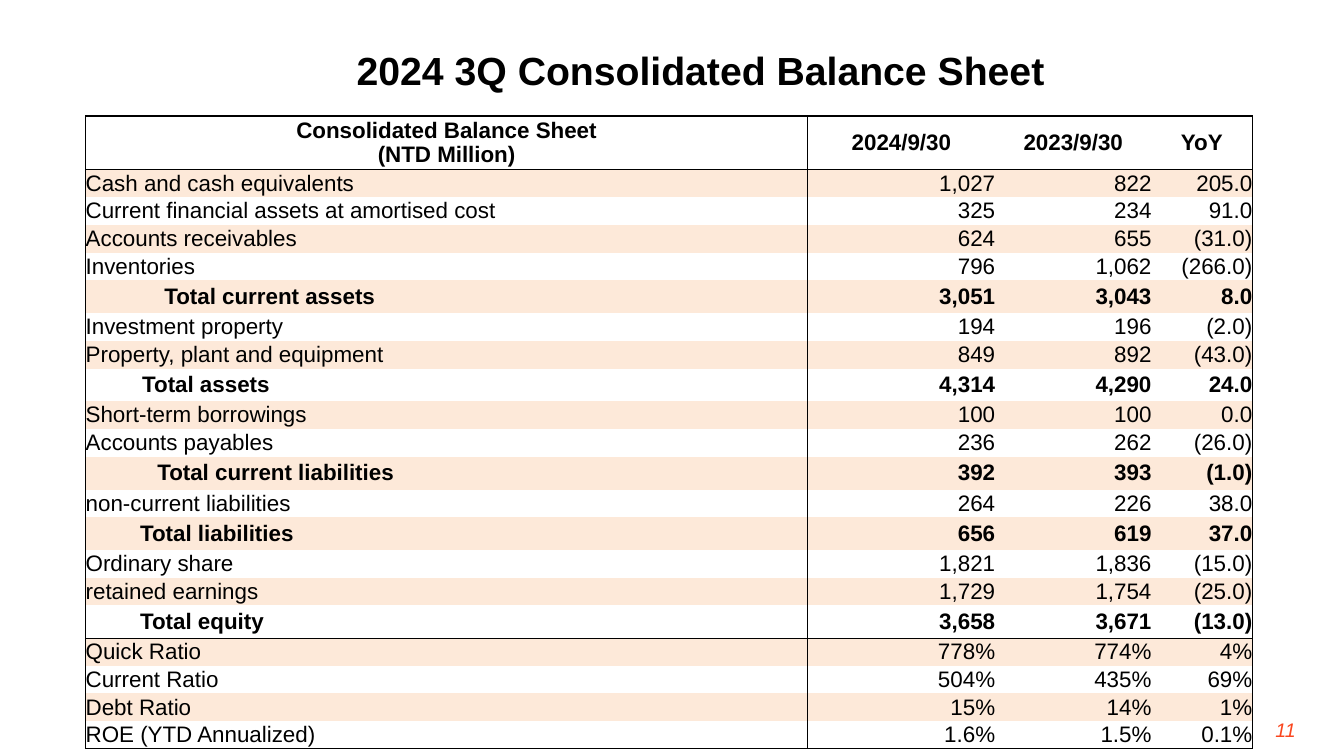
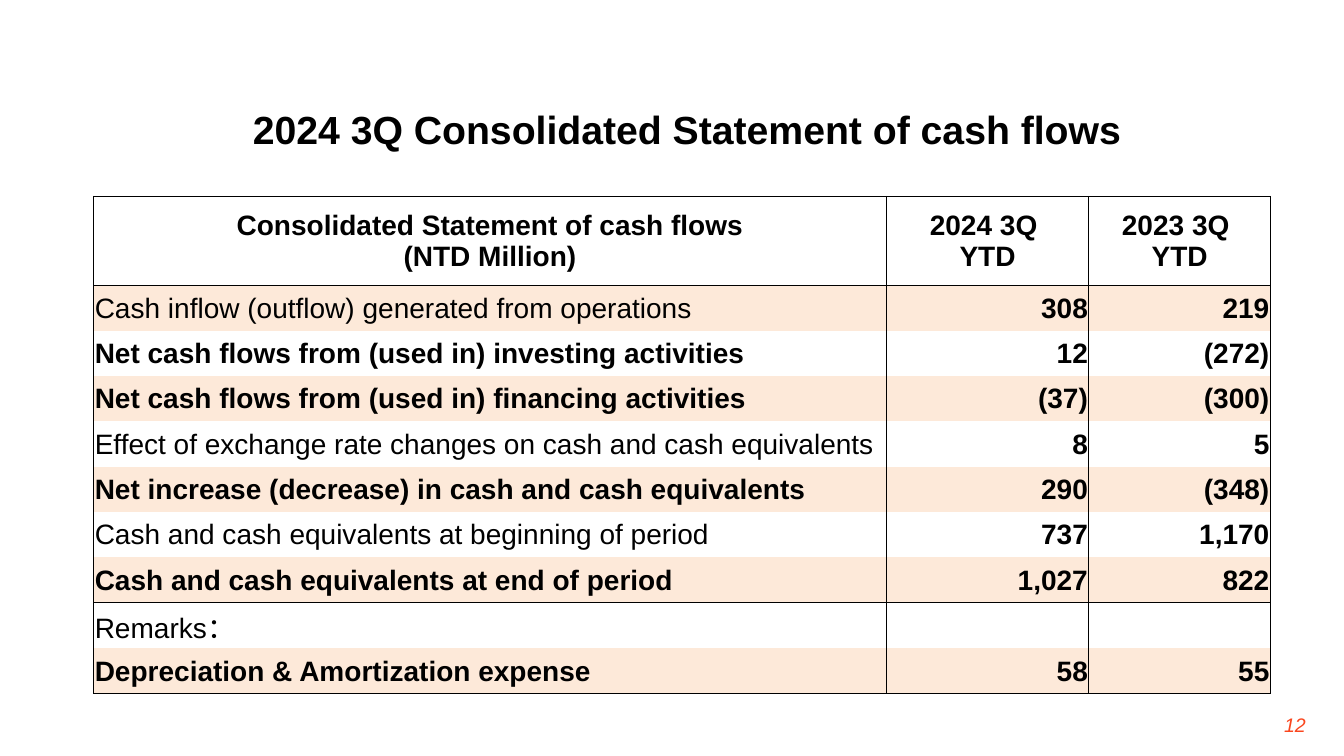
from lxml.etree import SubElement
from pptx import Presentation
from pptx.dml.color import RGBColor
from pptx.enum.shapes import MSO_SHAPE as Shape
from pptx.enum.text import MSO_ANCHOR as Anchor, PP_ALIGN as Align
from pptx.oxml.ns import qn
from pptx.util import Inches, Pt

HUES = {"text": "000000", "band": "FDE9D9", "page": "FA461E", "back": "FFFFFF"}
FONT = "Arial"

sheets = [
    {
        "title": "2024 3Q Consolidated Balance Sheet",
        "title_at": (3.4, 0.4, 7.25, 0.58),
        "page": "11",
        "page_at": (12.2, 7.07),
        "table_at": (0.85, 1.15),
        "cols": [7.16, 1.86, 1.55, 1],
        "head_high": 0.5,
        "row_high": 0.275,
        "sum_high": 0.325,
        "size": 16,
        "inset": 0,
        "bold_values": False,
        "uprights": {0, 1, 4},
        "rules": {0, 1, 17, 21},
        "head": ["Consolidated Balance Sheet\n(NTD Million)", "2024/9/30", "2023/9/30", "YoY"],
        "rows": [
            (False, 0, "Cash and cash equivalents", "1,027", "822", "205.0"),
            (False, 0, "Current financial assets at amortised cost", "325", "234", "91.0"),
            (False, 0, "Accounts receivables", "624", "655", "(31.0)"),
            (False, 0, "Inventories", "796", "1,062", "(266.0)"),
            (True, 0.78, "Total current assets", "3,051", "3,043", "8.0"),
            (False, 0, "Investment property", "194", "196", "(2.0)"),
            (False, 0, "Property, plant and equipment", "849", "892", "(43.0)"),
            (True, 0.56, "Total assets", "4,314", "4,290", "24.0"),
            (False, 0, "Short-term borrowings", "100", "100", "0.0"),
            (False, 0, "Accounts payables", "236", "262", "(26.0)"),
            (True, 0.71, "Total current liabilities", "392", "393", "(1.0)"),
            (False, 0, "non-current liabilities", "264", "226", "38.0"),
            (True, 0.54, "Total liabilities", "656", "619", "37.0"),
            (False, 0, "Ordinary share", "1,821", "1,836", "(15.0)"),
            (False, 0, "retained earnings", "1,729", "1,754", "(25.0)"),
            (True, 0.54, "Total equity", "3,658", "3,671", "(13.0)"),
            (False, 0, "Quick Ratio", "778%", "774%", "4%"),
            (False, 0, "Current Ratio", "504%", "435%", "69%"),
            (False, 0, "Debt Ratio", "15%", "14%", "1%"),
            (False, 0, "ROE (YTD Annualized)", "1.6%", "1.5%", "0.1%"),
        ],
    },
    {
        "title": "2024 3Q Consolidated Statement of cash flows",
        "title_at": (2.37, 0.99, 9.04, 0.58),
        "page": "12",
        "page_at": (12.3, 7.02),
        "table_at": (0.93, 1.95),
        "cols": [7.86, 2.01, 1.8],
        "head_high": 0.88,
        "row_high": 0.45,
        "sum_high": 0.45,
        "size": 20,
        "inset": 0.01,
        "bold_values": True,
        "uprights": {0, 1, 2, 3},
        "rules": {0, 1, 8, 10},
        "head": ["Consolidated Statement of cash flows\n(NTD Million)", "2024 3Q \nYTD", "2023 3Q \nYTD"],
        "rows": [
            (False, 0, "Cash inflow (outflow) generated from operations", "308", "219"),
            (True, 0, "Net cash flows from (used in) investing activities", "12", "(272)"),
            (True, 0, "Net cash flows from (used in) financing activities", "(37)", "(300)"),
            (False, 0, "Effect of exchange rate changes on cash and cash equivalents", "8", "5"),
            (True, 0, "Net increase (decrease) in cash and cash equivalents", "290", "(348)"),
            (False, 0, "Cash and cash equivalents at beginning of period", "737", "1,170"),
            (True, 0, "Cash and cash equivalents at end of period", "1,027", "822"),
            (False, 0, "Remarks：", "", ""),
            (True, 0, "Depreciation & Amortization expense", "58", "55"),
        ],
    },
]


def write(para, text, size, align, hue="text", bold=False, italic=False):
    para.alignment = align
    para.font.size = Pt(size)
    for i, line in enumerate(text.split("\n")):
        if i:
            para.add_line_break()
        if line:
            run = para.add_run()
            run.text = line
            font = run.font
            font.name, font.size = FONT, Pt(size)
            font.bold, font.italic = bold, italic
            font.color.rgb = RGBColor.from_string(HUES[hue])


def border(cell, edges):
    props = cell._tc.get_or_add_tcPr()
    for side, drawn in zip("LRTB", edges):
        line = SubElement(props, qn(f"a:ln{side}"), w=str(Pt(1)))
        if drawn:
            fill = SubElement(line, qn("a:solidFill"))
            SubElement(fill, qn("a:srgbClr"), val=HUES["text"])
        else:
            SubElement(line, qn("a:noFill"))


deck = Presentation()
deck.slide_width, deck.slide_height = Inches(13.33), Inches(7.5)

for sheet in sheets:
    slide = deck.slides.add_slide(deck.slide_layouts[6])

    title = slide.shapes.add_shape(Shape.ROUNDED_RECTANGLE, *map(Inches, sheet["title_at"]))
    title.adjustments[0] = 0.23
    title.shadow.inherit = False
    title.fill.solid()
    title.fill.fore_color.rgb = RGBColor.from_string(HUES["back"])
    title.line.fill.background()
    title.text_frame.vertical_anchor = Anchor.MIDDLE
    write(title.text_frame.paragraphs[0], sheet["title"], 28, Align.LEFT, bold=True)

    page = slide.shapes.add_textbox(*map(Inches, (*sheet["page_at"], 0.75, 0.4)))
    page.text_frame.word_wrap = True
    write(page.text_frame.paragraphs[0], sheet["page"], 14, Align.RIGHT, "page", italic=True)

    rows = [(True, 0, *sheet["head"]), *sheet["rows"]]
    highs = [sheet["head_high"]]
    highs += [sheet["sum_high" if row[0] else "row_high"] for row in sheet["rows"]]
    cols = sheet["cols"]
    size = map(Inches, (*sheet["table_at"], sum(cols), sum(highs)))
    table = slide.shapes.add_table(len(rows), len(cols), *size).table
    table.first_row = table.horz_banding = False
    for col, wide in zip(table.columns, cols):
        col.width = Inches(wide)
    for row, high in zip(table.rows, highs):
        row.height = Inches(high)

    for r, (bold, indent, *texts) in enumerate(rows):
        for c, text in enumerate(texts):
            cell = table.cell(r, c)
            inset = Inches(sheet["inset"])
            cell.margin_left = inset if c else inset + Inches(indent)
            cell.margin_right = cell.margin_top = inset
            cell.margin_bottom = 0
            cell.vertical_anchor = Anchor.MIDDLE
            border(cell, [c in sheet["uprights"], c + 1 in sheet["uprights"],
                          r in sheet["rules"], r + 1 in sheet["rules"]])
            if r % 2:
                cell.fill.solid()
                cell.fill.fore_color.rgb = RGBColor.from_string(HUES["band"])
            else:
                cell.fill.background()
            align = Align.CENTER if r == 0 else Align.RIGHT if c else Align.LEFT
            strong = bold or (c > 0 and sheet["bold_values"])
            write(cell.text_frame.paragraphs[0], text, sheet["size"], align, bold=strong)

deck.save("out.pptx")
